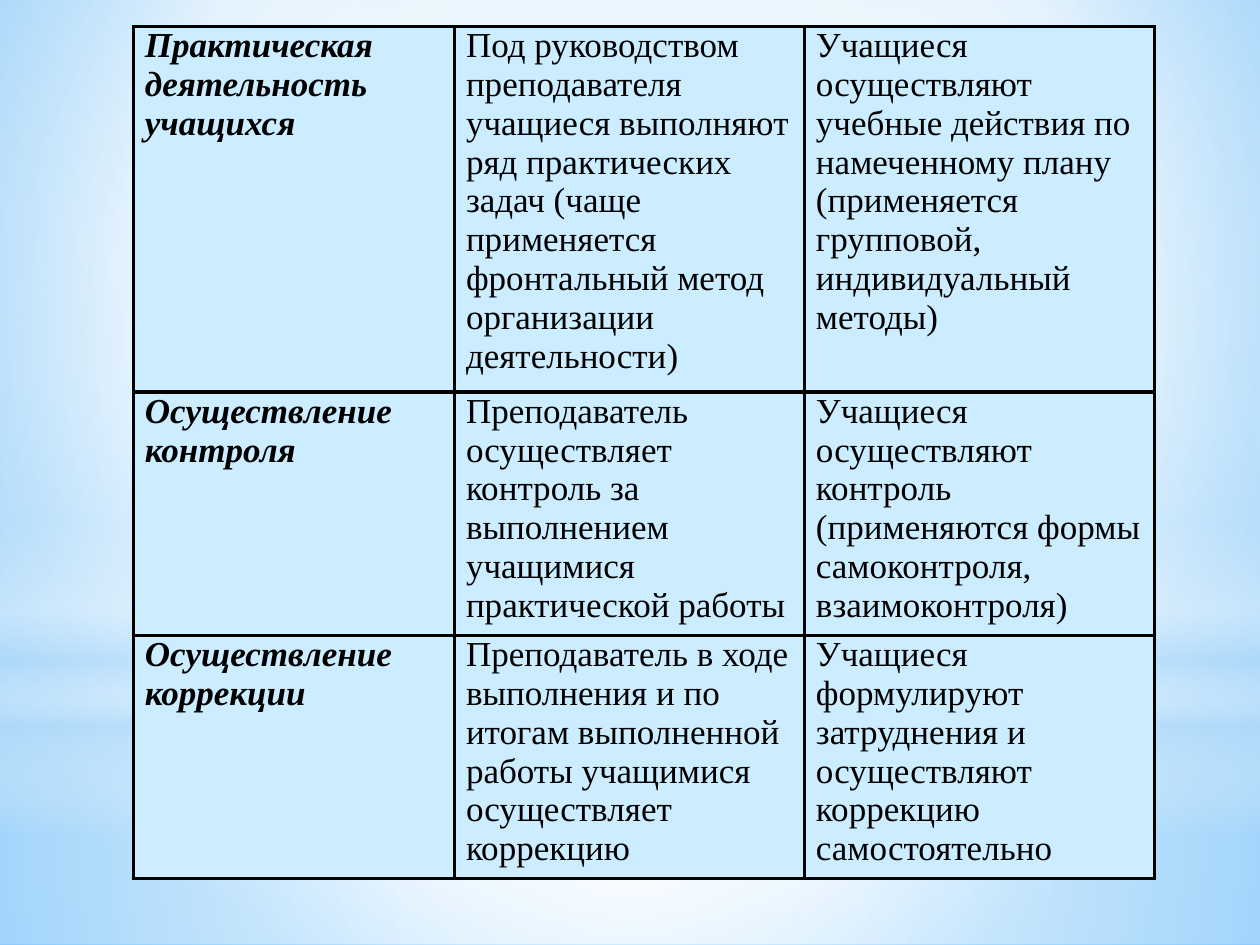
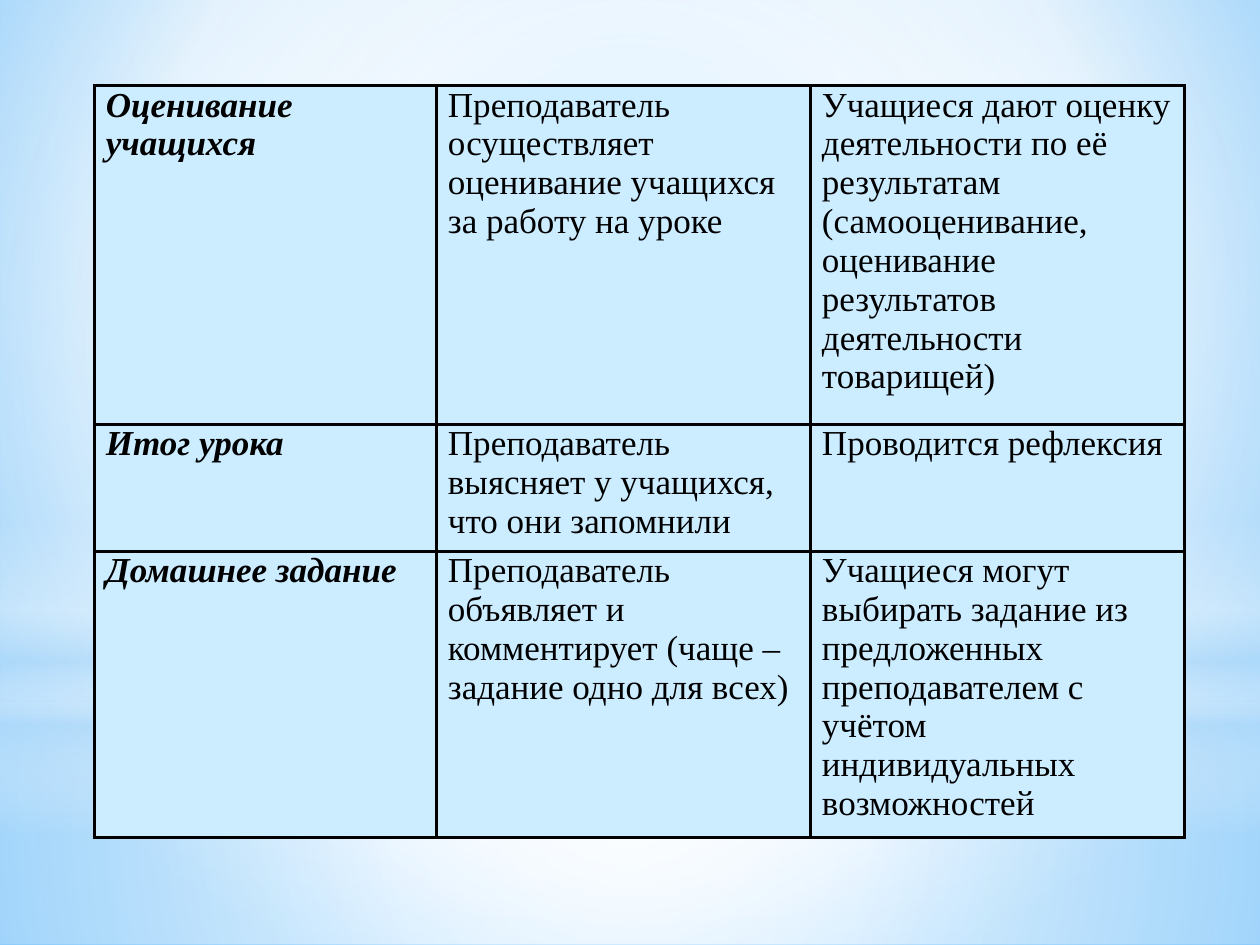
"""Build two slides comparing teacher and pupil activity at each stage of a lesson."""

from dataclasses import dataclass
from typing import Optional

import lxml.etree
import pptx
import pptx.dml.color
import pptx.dml.fill
import pptx.enum.shapes
import pptx.oxml
import pptx.oxml.ns
import pptx.presentation
import pptx.slide
import pptx.util

Pt = pptx.util.Pt
RGBColor = pptx.dml.color.RGBColor
ShapeKind = pptx.enum.shapes.MSO_SHAPE

SLIDE_WIDTH, SLIDE_HEIGHT = Pt(720), Pt(540)
BLANK_LAYOUT = 6
FONT_NAME = "Times New Roman"
FONT_SIZE = Pt(20)
BORDER_WIDTH = Pt(2.25)
CELL_MARGIN = Pt(6.5)

BLACK = RGBColor(0x00, 0x00, 0x00)
WHITE = RGBColor(0xFF, 0xFF, 0xFF)
CELL_BLUE = RGBColor(0xCC, 0xEC, 0xFF)
HAZE_BLUE = RGBColor(0xB4, 0xDC, 0xFA)
SKY_BLUE = RGBColor(0x9E, 0xD5, 0xFF)
DEEP_BLUE = RGBColor(0x5B, 0xB9, 0xFF)


@dataclass(frozen=True)
class Stop:
    position: int
    color: RGBColor
    opacity: int = 100


@dataclass(frozen=True)
class Gradient:
    stops: tuple[Stop, ...]
    focus: Optional[tuple[int, int, int, int]] = (50, 50, 50, 50)
    angle: int = 0


@dataclass(frozen=True)
class GlowLayer:
    kind: ShapeKind
    top: float
    height: float
    gradient: Gradient


@dataclass(frozen=True)
class LessonTable:
    left: float
    top: float
    column_widths: tuple[float, ...]
    row_heights: tuple[float, ...]
    rows: tuple[tuple[str, str, str], ...]


BACKGROUND = Gradient(
    (Stop(0, SKY_BLUE), Stop(60, WHITE), Stop(100, DEEP_BLUE)), (20, 10, 20, 60)
)

GLOW_LAYERS = (
    GlowLayer(ShapeKind.RECTANGLE, 402, 138, Gradient(
        (Stop(0, WHITE, 91), Stop(37, WHITE, 76), Stop(100, HAZE_BLUE, 79)))),
    GlowLayer(ShapeKind.RECTANGLE, 0, 402, Gradient(
        (Stop(0, WHITE, 89), Stop(48, WHITE, 62), Stop(100, HAZE_BLUE, 79)))),
    GlowLayer(ShapeKind.RECTANGLE, 297, 180, Gradient(
        (Stop(0, WHITE, 0), Stop(29, WHITE, 30), Stop(45, HAZE_BLUE, 40),
         Stop(55, WHITE, 26), Stop(65, HAZE_BLUE, 60), Stop(100, WHITE, 0)),
        None, 90)),
    GlowLayer(ShapeKind.OVAL, 126, 402, Gradient(
        (Stop(0, WHITE), Stop(56, WHITE, 0)))),
)

LESSON_TABLES = (
    LessonTable(76.3, 15, (183.5, 200, 200), (209, 139, 139), (
        ("Практическая деятельность учащихся",
         "Под руководством преподавателя учащиеся выполняют ряд практических задач "
         "(чаще применяется фронтальный метод организации деятельности)",
         "Учащиеся осуществляют учебные действия по намеченному плану "
         "(применяется групповой, индивидуальный методы)"),
        ("Осуществление контроля",
         "Преподаватель осуществляет контроль за выполнением учащимися "
         "практической работы",
         "Учащиеся осуществляют контроль (применяются формы самоконтроля, "
         "взаимоконтроля)"),
        ("Осуществление коррекции",
         "Преподаватель в ходе выполнения и по итогам выполненной работы учащимися "
         "осуществляет коррекцию",
         "Учащиеся формулируют затруднения и осуществляют коррекцию "
         "самостоятельно"),
    )),
    LessonTable(54, 49, (195.5, 213.75, 213.75), (193.5, 72.5, 163.5), (
        ("Оценивание учащихся",
         "Преподаватель осуществляет оценивание учащихся за работу на уроке",
         "Учащиеся дают оценку деятельности по её результатам (самооценивание, "
         "оценивание результатов деятельности товарищей)"),
        ("Итог урока",
         "Преподаватель выясняет у учащихся, что они запомнили",
         "Проводится рефлексия"),
        ("Домашнее задание",
         "Преподаватель объявляет и комментирует (чаще – задание одно для всех)",
         "Учащиеся могут выбирать задание из предложенных преподавателем с учётом "
         "индивидуальных возможностей"),
    )),
)


def add_child(parent: lxml.etree.ElementBase, tag: str, **attributes: object) -> lxml.etree.ElementBase:
    values = {name: str(value) for name, value in attributes.items()}
    return lxml.etree.SubElement(parent, pptx.oxml.ns.qn(tag), values)


def apply_gradient(
    fill: pptx.dml.fill.FillFormat, owner: lxml.etree.ElementBase, gradient: Gradient
) -> None:
    fill.gradient()
    element = owner.xpath(".//a:gradFill")[0]
    for child in list(element):
        element.remove(child)
    stop_list = add_child(element, "a:gsLst")
    for stop in gradient.stops:
        stop_element = add_child(stop_list, "a:gs", pos=stop.position * 1000)
        color = add_child(stop_element, "a:srgbClr", val=stop.color)
        if stop.opacity < 100:
            add_child(color, "a:alpha", val=stop.opacity * 1000)
    if gradient.focus is None:
        add_child(element, "a:lin", ang=gradient.angle * 60000, scaled=0)
    else:
        circle = add_child(element, "a:path", path="circle")
        sides = zip("ltrb", gradient.focus)
        add_child(circle, "a:fillToRect", **{side: share * 1000 for side, share in sides})


def decorate_master(master: pptx.slide.SlideMaster, slide: pptx.slide.Slide) -> None:
    apply_gradient(master.background.fill, master.element, BACKGROUND)
    for index, layer in enumerate(GLOW_LAYERS):
        shape = slide.shapes.add_shape(
            layer.kind, Pt(0), Pt(layer.top), SLIDE_WIDTH, Pt(layer.height)
        )
        shape.shadow.inherit = False
        shape.line.fill.background()
        apply_gradient(shape.fill, shape.element, layer.gradient)
        master.shapes.element.insert(2 + index, shape.element)


def add_borders(cell_properties: lxml.etree.ElementBase) -> None:
    for index, side in enumerate("LRTB"):
        border = pptx.oxml.parse_xml(
            f'<a:ln{side} {pptx.oxml.ns.nsdecls("a")} w="{BORDER_WIDTH}">'
            f'<a:solidFill><a:srgbClr val="{BLACK}"/></a:solidFill></a:ln{side}>'
        )
        cell_properties.insert(index, border)


def add_lesson_table(slide: pptx.slide.Slide, lesson: LessonTable) -> None:
    frame = slide.shapes.add_table(
        len(lesson.row_heights), len(lesson.column_widths),
        Pt(lesson.left), Pt(lesson.top),
        Pt(sum(lesson.column_widths)), Pt(sum(lesson.row_heights)),
    )
    table = frame.table
    table.first_row = table.horz_banding = False
    for column, width in zip(table.columns, lesson.column_widths):
        column.width = Pt(width)
    for row, height, texts in zip(table.rows, lesson.row_heights, lesson.rows):
        row.height = Pt(height)
        for column_index, (cell, text) in enumerate(zip(row.cells, texts)):
            cell.margin_left = cell.margin_right = CELL_MARGIN
            cell.margin_top = cell.margin_bottom = Pt(0)
            cell.fill.solid()
            cell.fill.fore_color.rgb = CELL_BLUE
            run = cell.text_frame.paragraphs[0].add_run()
            run.text = text
            run.font.name = FONT_NAME
            run.font.size = FONT_SIZE
            run.font.color.rgb = BLACK
            run.font.bold = run.font.italic = column_index == 0
    for cell_properties in frame.element.xpath(".//a:tcPr"):
        add_borders(cell_properties)


def main() -> None:
    presentation = pptx.Presentation()
    presentation.slide_width, presentation.slide_height = SLIDE_WIDTH, SLIDE_HEIGHT
    layout = presentation.slide_layouts[BLANK_LAYOUT]
    slides = [presentation.slides.add_slide(layout) for _ in LESSON_TABLES]
    decorate_master(presentation.slide_master, slides[0])
    for slide, lesson in zip(slides, LESSON_TABLES):
        add_lesson_table(slide, lesson)
    presentation.save("out.pptx")


if __name__ == "__main__":
    main()
